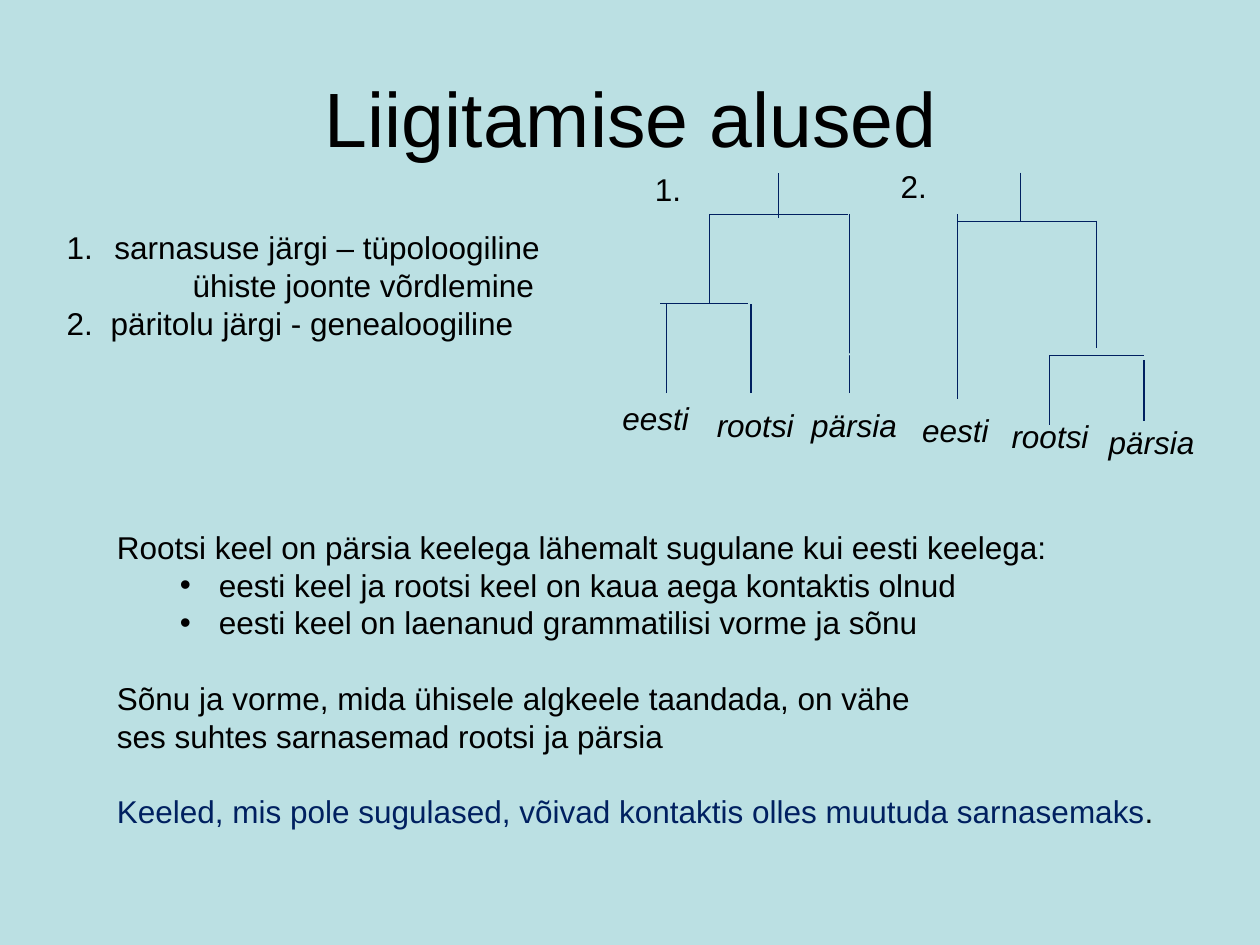
"""Build the slide on the grounds for classifying languages, with two language trees."""
from dataclasses import dataclass

from lxml import etree
from pptx import Presentation
from pptx.dml.color import RGBColor
from pptx.enum.shapes import MSO_CONNECTOR
from pptx.enum.text import MSO_ANCHOR, MSO_AUTO_SIZE, PP_ALIGN
from pptx.oxml.ns import qn
from pptx.slide import Slide
from pptx.util import Inches, Pt

STRAIGHT = MSO_CONNECTOR.STRAIGHT
CENTER = PP_ALIGN.CENTER
MIDDLE = MSO_ANCHOR.MIDDLE
GROW = MSO_AUTO_SIZE.SHAPE_TO_FIT_TEXT

BACKGROUND = RGBColor(0xBB, 0xE0, 0xE3)
NAVY = RGBColor(0x00, 0x20, 0x60)
BLACK = RGBColor(0x00, 0x00, 0x00)

BODY = {"name": "Arial", "size": Pt(18)}
HEADING = {"name": "Arial", "size": Pt(44)}
LANGUAGE = {**BODY, "italic": True}


@dataclass(frozen=True)
class Run:
    text: str
    color: RGBColor = BLACK


@dataclass(frozen=True)
class Para:
    runs: tuple[Run, ...]
    level: int = 0
    margin: float = 0
    indent: float = 0
    bullet: str = ""
    number: int = 0
    before: float = 0


@dataclass(frozen=True)
class Box:
    left: float
    top: float
    width: float
    height: float
    paras: tuple[Para, ...]


@dataclass(frozen=True)
class Line:
    x1: float
    y1: float
    x2: float
    y2: float
    color: RGBColor = NAVY


def para(text: str, **layout) -> Para:
    """Make a paragraph of one black run."""
    return Para((Run(text),), **layout)


def label(left: float, top: float, width: float, text: str) -> Box:
    """Make a one-line box."""
    return Box(left, top, width, 0.4, (para(text),))


TITLE = Box(0.51, 0.3, 9, 1.25, (para("Liigitamise alused"),))

TEXTS = (
    Box(0.43, 1.76, 4.78, 1.01, (
        para("sarnasuse järgi – tüpoloogiline", margin=0.38, indent=-0.38, number=1),
        para("ühiste joonte võrdlemine", margin=1),
        para("päritolu järgi - genealoogiline", margin=0.35, indent=-0.35, number=2),
    )),
    Box(0.83, 4.14, 8.74, 2.52, (
        para("Rootsi keel on pärsia keelega lähemalt sugulane kui eesti keelega:"),
        *(para(text, level=1, margin=0.81, indent=-0.31, bullet="•") for text in (
            "eesti keel ja rootsi keel on kaua aega kontaktis olnud",
            "eesti keel on laenanud grammatilisi vorme ja sõnu",
        )),
        para("Sõnu ja vorme, mida ühisele algkeele taandada, on vähe", before=0.3),
        para("ses suhtes sarnasemad rootsi ja pärsia"),
        Para((
            Run("Keeled, mis pole sugulased, võivad kontaktis olles muutuda sarnasemaks", NAVY),
            Run("."),
        ), before=0.3),
    )),
    label(5.1, 1.3, 0.53, "1."),
    label(7.05, 1.28, 0.55, "2."),
)

LANGUAGES = (
    label(4.84, 3.12, 0.75, "eesti"),
    label(5.59, 3.17, 0.91, "rootsi"),
    label(6.34, 3.17, 1.1, "pärsia"),
    label(7.22, 3.21, 0.76, "eesti"),
    label(7.93, 3.26, 0.93, "rootsi"),
    label(8.7, 3.31, 1.1, "pärsia"),
)

SIMILARITY_TREE = (
    Line(6.18, 1.73, 6.18, 1.37),
    Line(5.63, 1.7, 6.73, 1.7),
    Line(5.63, 2.41, 5.63, 1.7),
    Line(6.74, 3.12, 6.74, 1.7),
    Line(5.24, 2.41, 5.94, 2.41),
    Line(5.29, 3.12, 5.29, 2.41),
    Line(5.96, 3.12, 5.96, 2.41),
    Line(6.34, 2.41, 7.34, 3.41, BACKGROUND),
)

ORIGIN_TREE = (
    Line(7.6, 1.7, 7.6, 3.17),
    Line(8.33, 2.82, 8.33, 3.37),
    Line(9.08, 2.86, 9.08, 3.34),
    Line(8.33, 2.82, 9.08, 2.82),
    Line(8.1, 1.37, 8.1, 1.76),
    Line(8.7, 1.75, 8.7, 2.76),
    Line(8.7, 1.76, 7.6, 1.76),
)


def format_para(p, spec_para: Para) -> None:
    """Set level, spacing, indents and list mark of a paragraph."""
    p.level = spec_para.level
    p.space_before = Inches(spec_para.before)
    pPr = p._p.get_or_add_pPr()
    pPr.set("marL", str(Inches(spec_para.margin)))
    pPr.set("indent", str(Inches(spec_para.indent)))
    if spec_para.bullet:
        etree.SubElement(pPr, qn("a:buFont"), typeface="Arial")
        etree.SubElement(pPr, qn("a:buChar"), char=spec_para.bullet)
    elif spec_para.number:
        etree.SubElement(pPr, qn("a:buAutoNum"), type="arabicPeriod",
                         startAt=str(spec_para.number))


def add_text(s: Slide, box: Box, font: dict):
    """Add a text box and return its text frame."""
    sp = s.shapes.add_textbox(*map(Inches, (box.left, box.top, box.width, box.height)))
    tf = sp.text_frame
    tf.word_wrap = True
    tf.auto_size = GROW
    for i, item in enumerate(box.paras):
        p = tf.add_paragraph() if i else tf.paragraphs[0]
        format_para(p, item)
        for run in item.runs:
            r = p.add_run()
            r.text = run.text
            r.font.color.rgb = run.color
            for name, value in font.items():
                setattr(r.font, name, value)
    return tf


def add_line(s: Slide, line: Line) -> None:
    """Add a thin straight line without a shadow."""
    sp = s.shapes.add_connector(STRAIGHT, *map(Inches, (line.x1, line.y1, line.x2, line.y2)))
    sp.line.color.rgb = line.color
    sp.line.width = Pt(0.75)
    etree.SubElement(sp._element.spPr, qn("a:effectLst"))


def main() -> None:
    """Draw the slide and save it."""
    prs = Presentation()
    prs.slide_width, prs.slide_height = Inches(10), Inches(7.5)
    s = prs.slides.add_slide(prs.slide_layouts[6])
    s.background.fill.solid()
    s.background.fill.fore_color.rgb = BACKGROUND

    tf = add_text(s, TITLE, HEADING)
    tf.auto_size = MSO_AUTO_SIZE.NONE
    tf.vertical_anchor = MIDDLE
    tf.paragraphs[0].alignment = CENTER

    for line in SIMILARITY_TREE + ORIGIN_TREE:
        add_line(s, line)
    for boxes, font in ((TEXTS, BODY), (LANGUAGES, LANGUAGE)):
        for box in boxes:
            add_text(s, box, font)
    prs.save("out.pptx")


if __name__ == "__main__":
    main()
